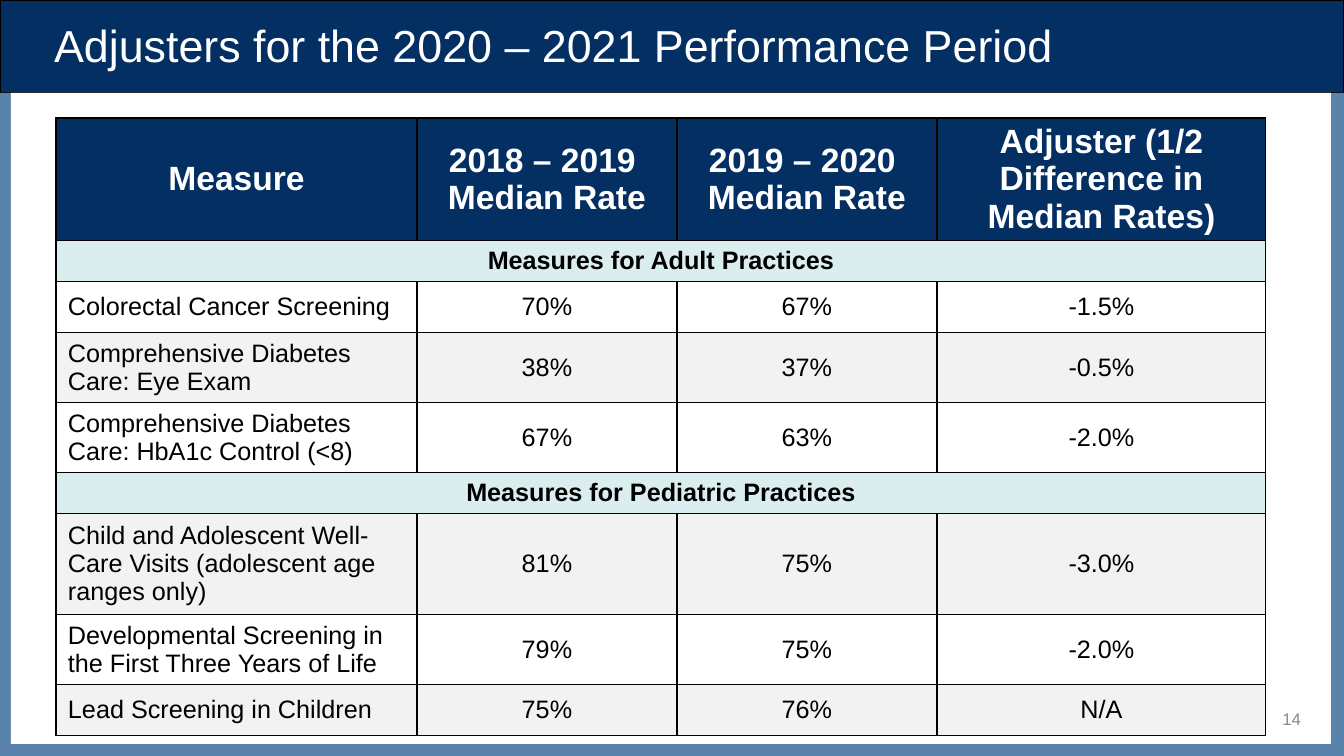
from dataclasses import dataclass
from typing import Any

from pptx import Presentation
from pptx.dml.color import RGBColor
from pptx.enum.shapes import MSO_SHAPE as Preset
from pptx.enum.text import MSO_ANCHOR as Anchor, MSO_AUTO_SIZE as AutoSize, PP_ALIGN as Align
from pptx.oxml import parse_xml
from pptx.oxml.ns import nsdecls
from pptx.util import Emu, Pt

EMU_PER_PX = 914400 / 100.8
NAVY, STEEL, WHITE, BLACK = "042F63", "5983AA", "FFFFFF", "000000"
AQUA, PALE, GREY = "DAEDEF", "F2F2F2", "898989"


@dataclass(frozen=True)
class Bar:
    left: int
    top: int
    width: int
    height: int
    fill: str
    line: str = ""


@dataclass(frozen=True)
class Row:
    height: int
    texts: tuple[str, ...]
    fill: str


@dataclass(frozen=True)
class TextStyle:
    size: int
    color: str
    bold: bool = False
    align: Align = Align.CENTER
    indent: int = 0


BARS = (
    Bar(0, 0, 1344, 93, NAVY, BLACK),
    Bar(0, 93, 1344, 663, STEEL),
    Bar(11, 93, 1320, 651, WHITE),
)
COLUMN_WIDTHS = (361, 260, 260, 329)
ROWS = (
    Row(122, ("Measure", "2018 – 2019 \nMedian Rate", "2019 – 2020 \nMedian Rate",
              "Adjuster (1/2 Difference in Median Rates)"), NAVY),
    Row(41, ("Measures for Adult Practices",), AQUA),
    Row(51, ("Colorectal Cancer Screening", "70%", "67%", "-1.5%"), WHITE),
    Row(70, ("Comprehensive Diabetes Care: Eye Exam", "38%", "37%", "-0.5%"), PALE),
    Row(70, ("Comprehensive Diabetes Care: HbA1c Control (<8)", "67%", "63%", "-2.0%"), WHITE),
    Row(41, ("Measures for Pediatric Practices",), AQUA),
    Row(101, ("Child and Adolescent Well-Care Visits (adolescent age ranges only)",
              "81%", "75%", "-3.0%"), PALE),
    Row(70, ("Developmental Screening in the First Three Years of Life",
             "79%", "75%", "-2.0%"), WHITE),
    Row(51, ("Lead Screening in Children", "75%", "76%", "N/A"), PALE),
)
HEADER = TextStyle(24, WHITE, bold=True)
SECTION = TextStyle(18, BLACK, bold=True)
MEASURE = TextStyle(18, BLACK, align=Align.LEFT, indent=5)
RATE = TextStyle(18, BLACK)


def px(length: int) -> Emu:
    return Emu(round(length * EMU_PER_PX))


def rgb(color: str) -> RGBColor:
    return RGBColor.from_string(color)


def apply(target: Any, values: dict[str, Any]) -> None:
    for name, value in values.items():
        setattr(target, name, value)


def place(shape: Any, left: int, top: int, width: int, height: int) -> None:
    apply(shape, {"left": px(left), "top": px(top), "width": px(width), "height": px(height)})


def paint(target: Any, color: str) -> None:
    target.fill.solid()
    target.fill.fore_color.rgb = rgb(color)


def write(frame: Any, text: str, style: TextStyle) -> None:
    for index, line in enumerate(text.split("\n")):
        para = frame.paragraphs[0] if index == 0 else frame.add_paragraph()
        para.alignment = style.align
        if style.indent:
            para._p.get_or_add_pPr().set("marL", str(px(style.indent)))
        span = para.add_run()
        span.text = line
        apply(span.font, {"name": "Arial", "size": Pt(style.size), "bold": style.bold})
        span.font.color.rgb = rgb(style.color)


def draw_bar(slide: Any, bar: Bar) -> None:
    box = slide.shapes.add_shape(
        Preset.RECTANGLE, px(bar.left), px(bar.top), px(bar.width), px(bar.height))
    box.shadow.inherit = False
    paint(box, bar.fill)
    if bar.line:
        box.line.color.rgb = rgb(bar.line)
        box.line.width = Pt(0.75)
    else:
        box.line.fill.background()
    slide.shapes.title.element.addprevious(box.element)


def draw_title(slide: Any) -> None:
    title = slide.shapes.title
    place(title, 44, 8, 1254, 73)
    apply(title.text_frame, {"vertical_anchor": Anchor.MIDDLE, "word_wrap": True,
                             "auto_size": AutoSize.NONE})
    write(title.text_frame, "Adjusters for the 2020 – 2021 Performance Period",
          TextStyle(32, WHITE, align=Align.LEFT))


def add_borders(cell: Any) -> None:
    properties = cell._tc.get_or_add_tcPr()
    for index, side in enumerate(("lnL", "lnR", "lnT", "lnB")):
        properties.insert(index, parse_xml(
            f'<a:{side} {nsdecls("a")} w="{Pt(1)}"><a:solidFill>'
            f'<a:srgbClr val="{BLACK}"/></a:solidFill></a:{side}>'))


def pick_style(row: Row, column: int) -> TextStyle:
    if row.fill == NAVY:
        return HEADER
    if row.fill == AQUA:
        return SECTION
    return RATE if column else MEASURE


def draw_table(slide: Any) -> None:
    table = slide.shapes.add_table(
        len(ROWS), len(COLUMN_WIDTHS), px(56), px(118),
        px(sum(COLUMN_WIDTHS)), px(sum(row.height for row in ROWS))).table
    apply(table, {"first_row": False, "horz_banding": False})
    for column, width in zip(table.columns, COLUMN_WIDTHS):
        column.width = px(width)
    for index, row in enumerate(ROWS):
        table.rows[index].height = px(row.height)
        for cell in table.rows[index].cells:
            paint(cell, row.fill)
            add_borders(cell)
        if row.fill == AQUA:
            table.cell(index, 0).merge(table.cell(index, len(COLUMN_WIDTHS) - 1))
        for column, text in enumerate(row.texts):
            cell = table.cell(index, column)
            cell.vertical_anchor = Anchor.MIDDLE
            if row.fill != NAVY:
                apply(cell, {"margin_left": px(7), "margin_right": px(7),
                             "margin_top": 0, "margin_bottom": 0})
            write(cell.text_frame, text, pick_style(row, column))


def draw_page_number(slide: Any) -> None:
    box = slide.shapes.add_textbox(px(1232), px(706), px(79), px(25))
    apply(box.text_frame, {"word_wrap": True, "vertical_anchor": Anchor.MIDDLE})
    write(box.text_frame, "14", TextStyle(12, GREY, align=Align.RIGHT))


def main() -> None:
    deck = Presentation()
    apply(deck, {"slide_width": px(1344), "slide_height": px(756)})
    slide = deck.slides.add_slide(deck.slide_layouts[5])
    for bar in BARS:
        draw_bar(slide, bar)
    draw_title(slide)
    draw_table(slide)
    draw_page_number(slide)
    deck.save("out.pptx")


if __name__ == "__main__":
    main()
